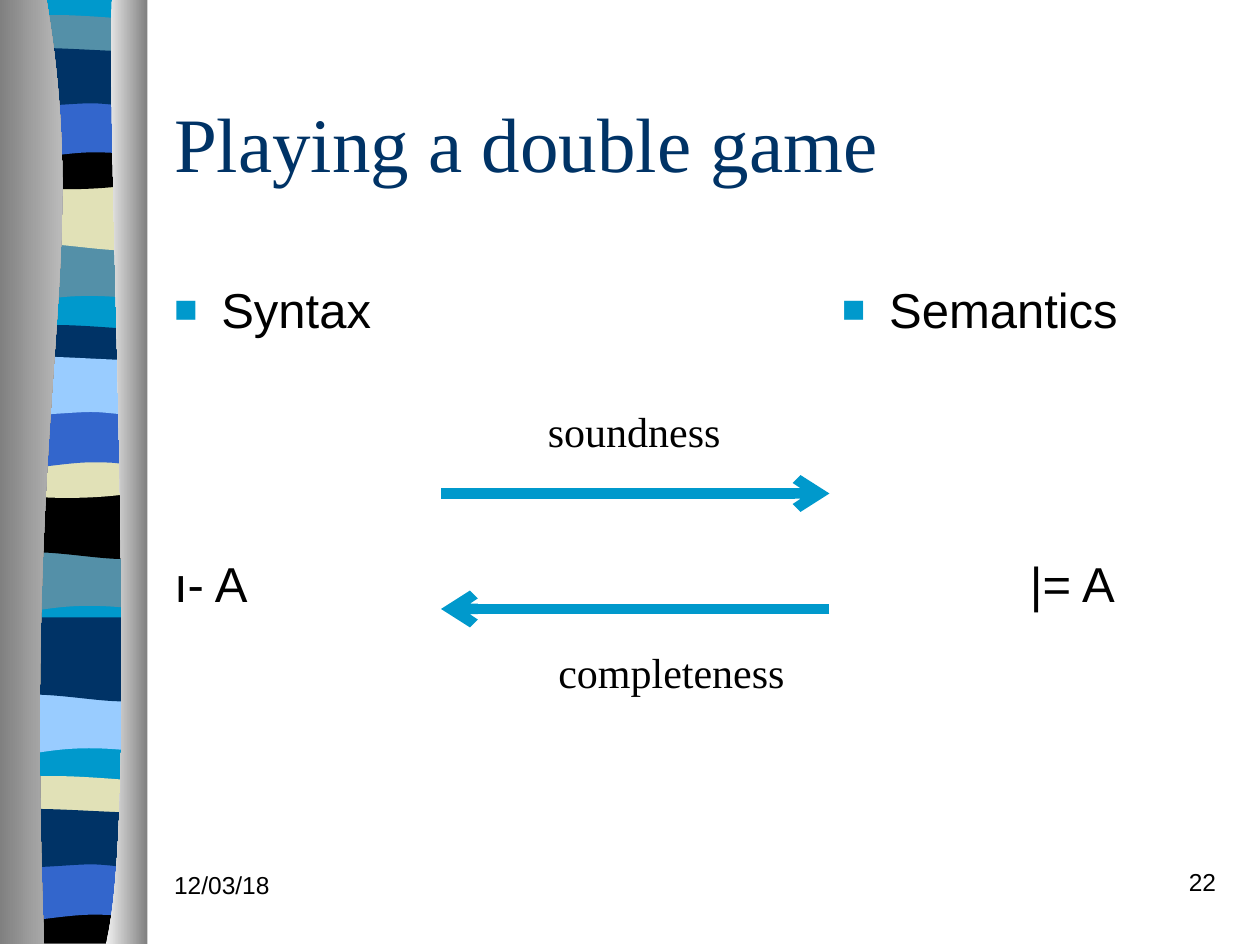
from lxml.etree import SubElement
from pptx import Presentation
from pptx.dml.color import RGBColor
from pptx.enum.shapes import MSO_CONNECTOR
from pptx.enum.text import MSO_ANCHOR, PP_ALIGN
from pptx.oxml.ns import qn
from pptx.util import Emu, Inches, Pt

COLS, ROWS = 120, 90
FINE_COLS = 1000
THEME = {
    "cyan": "0099CC", "teal": "5490A8", "navy": "003366", "blue": "3366CC",
    "sky": "99CCFF", "sand": "E1E1B7", "black": "000000",
    "shade": "808080", "light": "D8D8D8", "gleam": "F0F0F0",
    "serif": "Times New Roman", "sans": "Arial",
    "title": 44, "body": 28, "label": 24, "footer": 14, "arrow": 6,
}

LEFT, RIGHT = 5, 114
FLAT = [(LEFT, 0), (RIGHT, 0)]
WAVES = {
    "sheet": (FLAT, [(RIGHT, 0), (RIGHT, 747), (LEFT, 747)]),
    "swoop": (FLAT, [(RIGHT, 53), (39, 43), (24, 61), (LEFT, 52)]),
    "swell": ([(LEFT, -9), (RIGHT, -9)], [(RIGHT, 55), (96, 64), (39, 47), (LEFT, 54)]),
    "ribbon": ([(LEFT, 0), (12, -5), (29, -4), (47, -4), (65, -4), (100, -1), (RIGHT, 0)],
               [(RIGHT, 29), (96, 34), (24, 34), (LEFT, 29)]),
    "bowl": ([(LEFT, 0), (72, 5), (91, 0), (RIGHT, 0)],
             [(RIGHT, 36), (96, 43), (24, 45), (LEFT, 37)]),
    "arch": (FLAT, [(RIGHT, 53), (97, 47), (90, 47), (72, 47), (54, 47), (22, 53), (LEFT, 53)]),
    "ripple": ([(LEFT, -1), (21, -6), (79, 0), (RIGHT, 0)],
               [(RIGHT, 41), (107, 46), (90, 41), (72, 41), (54, 41), (17, 46), (LEFT, 41)]),
    "hem": ([(LEFT, 0), (72, 5), (91, 0), (RIGHT, 0)], [(RIGHT, 37), (LEFT, 37)]),
}
BANDS = [
    ("sheet", 0, "cyan"),
    ("swoop", 185, "teal"), ("swell", 141, "sand"), ("ribbon", 16, "teal"),
    ("bowl", 108, "black"), ("arch", 74, "blue"), ("ripple", 41, "navy"),
    ("swoop", 431, "teal"), ("swell", 386, "black"), ("ribbon", 262, "navy"),
    ("bowl", 353, "sand"), ("arch", 320, "blue"), ("ripple", 286, "sky"),
    ("swoop", 544, "sky"), ("swell", 499, "navy"), ("ribbon", 620, "sand"),
    ("hem", 712, "black"), ("arch", 679, "blue"), ("ripple", 645, "navy"),
]
DRAPES = [
    ([(37, 0), (73, 216), (18, 296), (35, 749)], [(0, 749), (0, 0)], "shade", "light"),
    ([(89, 0), (84, 125), (112, 646), (84, 749)], [(117, 749), (117, 0)], "gleam", "shade"),
]

BULLET = {"bullet": True}
DROP = Pt(123.2)
TEXTS = [
    ((15.4, 82.3, 25, 6), "sans", "footer", "black", {}, [("12/03/18", {})]),
    ((92, 82, 25, 6), "sans", "footer", "black", {},
     [("22", {"alignment": PP_ALIGN.RIGHT})]),
    ((15.4, 6, 102, 15), "serif", "title", "navy",
     {"vertical_anchor": MSO_ANCHOR.MIDDLE}, [("Playing a double game", {})]),
    ((15.4, 26, 50, 54), "sans", "body", "black", {},
     [("Syntax", BULLET), ("ı- A", {"space_before": DROP})]),
    ((79, 26, 39, 54), "sans", "body", "black", {},
     [("Semantics", BULLET), ("|= A", {"space_before": DROP, "indent": 17.9})]),
    ((52, 61, 24.2, 6), "serif", "label", "black", {"word_wrap": False}, [("completeness", {})]),
    ((51, 38, 19, 6), "serif", "label", "black", {"word_wrap": False}, [("soundness", {})]),
]
ARROWS = [((42, 47), (79, 47)), ((79, 58), (42, 58))]

prs = Presentation()
prs.slide_width, prs.slide_height = Inches(10), Inches(7.5)
s = prs.slides.add_slide(prs.slide_layouts[6])


def rgb(name):
    return RGBColor.from_string(THEME[name])


def grid(*cells):
    steps = (prs.slide_width / COLS, prs.slide_height / ROWS)
    return [Emu(round(c * steps[i % 2])) for i, c in enumerate(cells)]


def set_all(obj, values):
    for name, value in values.items():
        setattr(obj, name, value)


def bend(lines):
    curve = lines[0].makeelement(qn("a:cubicBezTo"))
    lines[0].addprevious(curve)
    for line in lines:
        curve.append(line[0])
        line.getparent().remove(line)


def add_outline(edges, top=0):
    unit = prs.slide_width / FINE_COLS
    pts = [(round(x * unit), round((y + top) * unit)) for edge in edges for x, y in edge]
    builder = s.shapes.build_freeform(*pts[0], scale=1.0)
    builder.add_line_segments(pts[1:], close=True)
    sp = builder.convert_to_shape()
    sp.shadow.inherit = False
    sp.line.fill.background()
    lines = list(sp._element.iter(qn("a:lnTo")))
    first = 0
    for edge in edges:
        if len(edge) % 3 == 1:
            for i in range(first, first + len(edge) - 1, 3):
                bend(lines[i:i + 3])
        first += len(edge)
    return sp


def add_bullet(p):
    pPr = p._p.get_or_add_pPr()
    hang = grid(4.5)[0]
    pPr.set("marL", str(hang))
    pPr.set("indent", str(-hang))
    SubElement(SubElement(pPr, qn("a:buClr")), qn("a:srgbClr"), val=THEME["cyan"])
    SubElement(pPr, qn("a:buSzPct"), val="80000")
    SubElement(pPr, qn("a:buFont"), typeface=THEME["sans"])
    SubElement(pPr, qn("a:buChar"), char="■")


def add_text(box, font, size, color, frame, paragraphs):
    tf = s.shapes.add_textbox(*grid(*box)).text_frame
    set_all(tf, {"word_wrap": True, **frame})
    for i, (text, style) in enumerate(paragraphs):
        p = tf.paragraphs[0] if i == 0 else tf.add_paragraph()
        style = dict(style)
        bullet, indent = style.pop("bullet", False), style.pop("indent", 0)
        set_all(p, style)
        if bullet:
            add_bullet(p)
        if indent:
            p._p.get_or_add_pPr().set("marL", str(grid(indent)[0]))
        r = p.add_run()
        r.text = text
        set_all(r.font, {"name": THEME[font], "size": Pt(THEME[size])})
        r.font.color.rgb = rgb(color)


def add_arrow(start, end):
    cx = s.shapes.add_connector(MSO_CONNECTOR.STRAIGHT, *grid(*start, *end))
    cx.line.color.rgb = rgb("cyan")
    cx.line.width = Pt(THEME["arrow"])
    SubElement(cx.line._get_or_add_ln(), qn("a:tailEnd"), type="arrow")
    SubElement(cx._element.spPr, qn("a:effectLst"))


for wave, top, color in BANDS:
    sp = add_outline(WAVES[wave], top)
    sp.fill.solid()
    sp.fill.fore_color.rgb = rgb(color)

for *edges, start, end in DRAPES:
    fill = add_outline(edges).fill
    fill.gradient()
    fill.gradient_angle = 0
    for stop, color in zip(fill.gradient_stops, (start, end)):
        stop.color.rgb = rgb(color)

for text in TEXTS:
    add_text(*text)
for arrow in ARROWS:
    add_arrow(*arrow)

prs.save("out.pptx")
